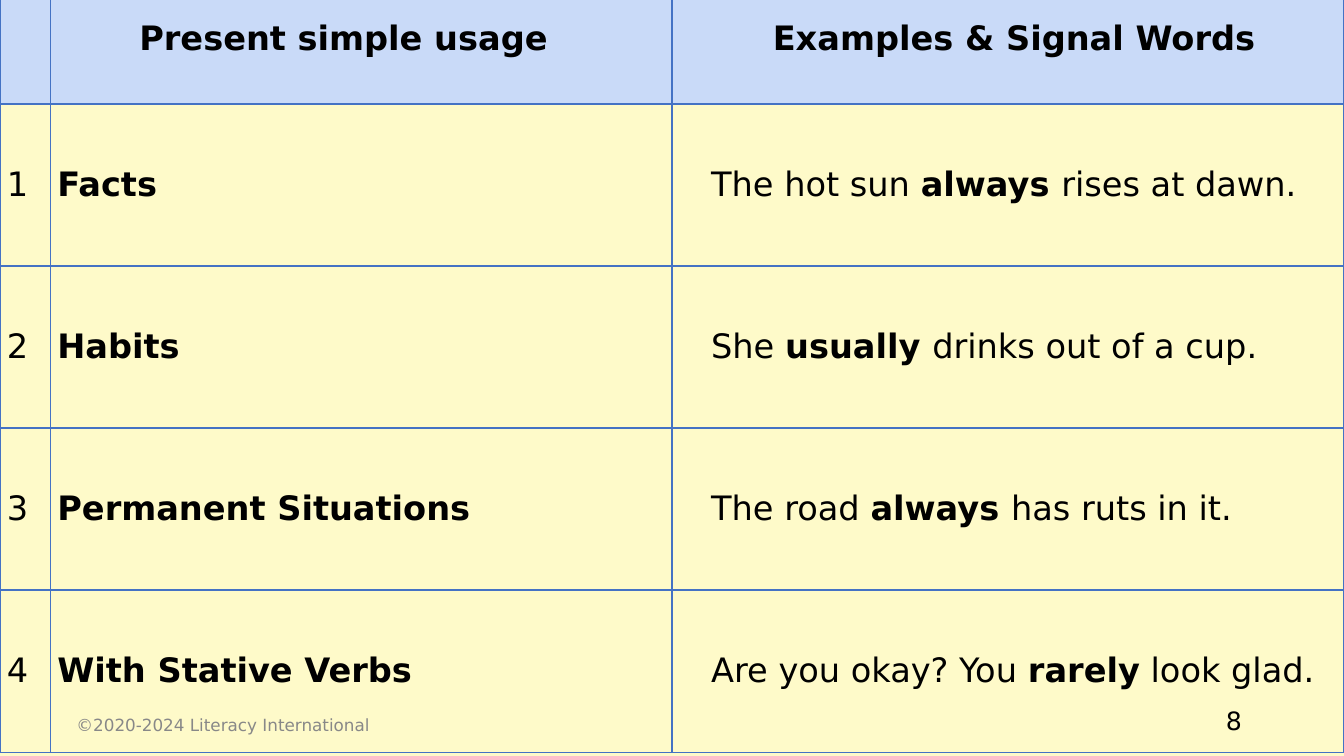
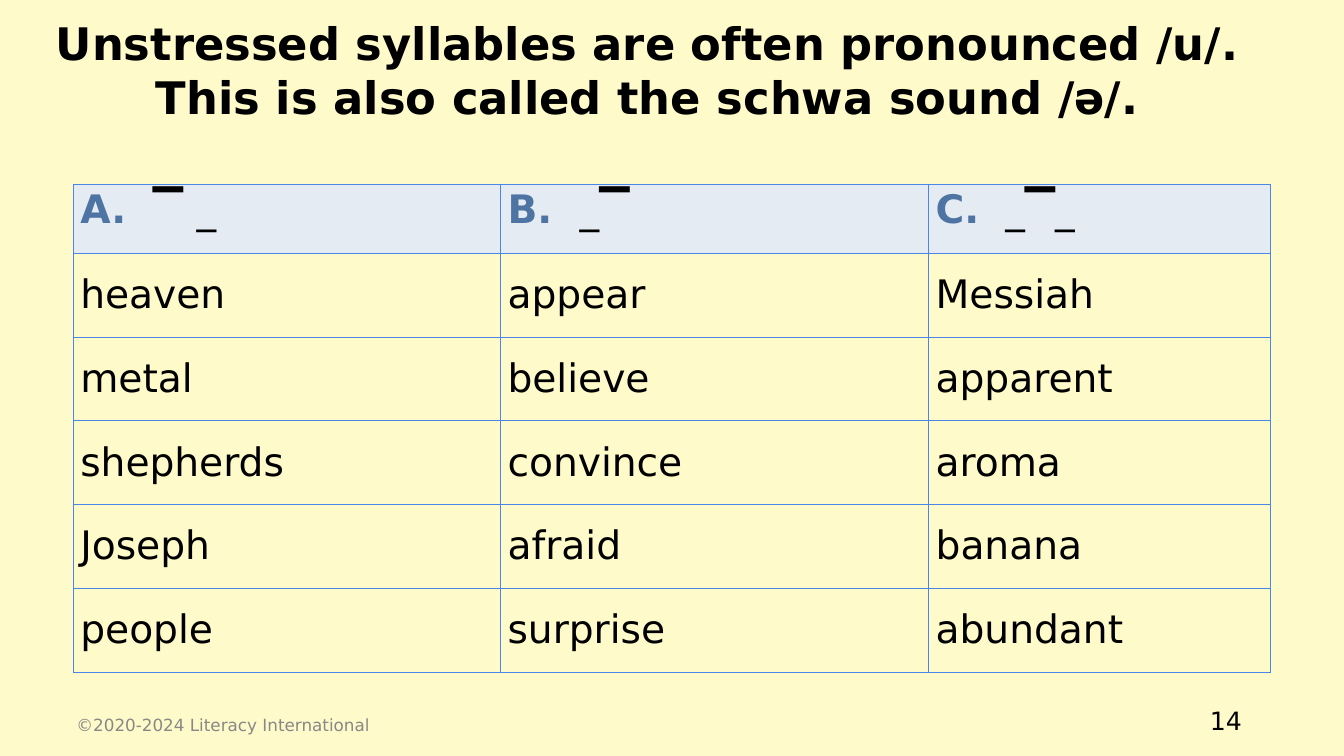
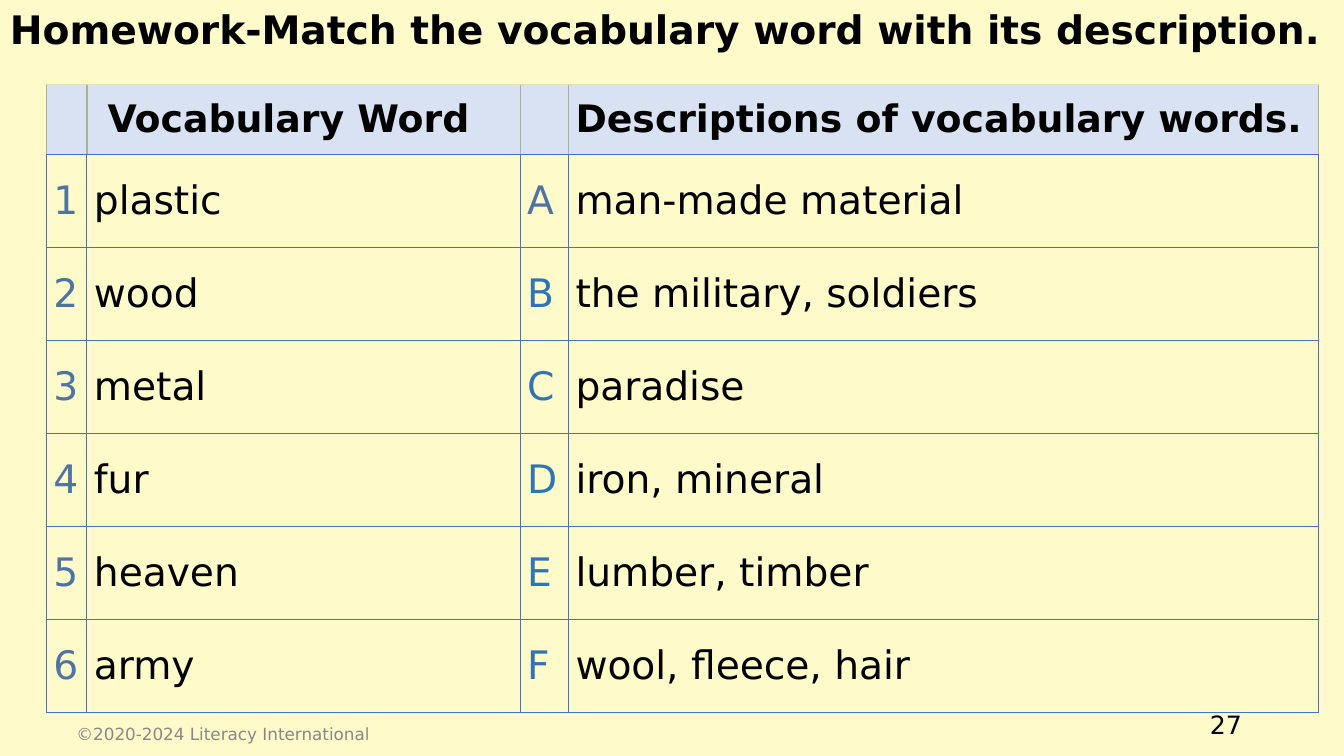
from lxml.etree import SubElement
from pptx import Presentation
from pptx.dml.color import RGBColor
from pptx.enum.text import MSO_ANCHOR, PP_ALIGN
from pptx.oxml.ns import qn
from pptx.util import Pt

FONT = "DejaVu Sans"
HUES = {
    "page": "FEFAC9", "ink": "000000", "gray": "888888",
    "slate": "4E74A3", "blue": "2E75B6", "line": "4472C4",
    "sky": "4A86E8", "sage": "A5B592",
    "usage": "C9DAF8", "sound": "E4EBF2", "match": "D8E2F3",
}
WIDE, TALL = 960, 540
USES = [
    ("", "*Present simple usage", "*Examples & Signal Words"),
    ("1", "*Facts", "The hot sun *always *rises at dawn."),
    ("2", "*Habits", "She *usually *drinks out of a cup."),
    ("3", "*Permanent Situations", "The road *always *has ruts in it."),
    ("4", "*With Stative Verbs", "Are you okay? You *rarely* look glad."),
]
SOUNDS = [
    ("*\t▔ *_", "\t_*▔", "\t_*▔*_"),
    ("heaven", "appear", "Messiah"),
    ("metal", "believe", "apparent"),
    ("shepherds", "convince", "aroma"),
    ("Joseph", "afraid", "banana"),
    ("people", "surprise", "abundant"),
]
PAIRS = [
    ("", "*Vocabulary Word", "", "*Descriptions of vocabulary words."),
    ("1", "plastic", "A", "man-made material"),
    ("2", "wood", "B", "the military, soldiers"),
    ("3", "metal", "C", "paradise"),
    ("4", "fur", "D", "iron, mineral"),
    ("5", "heaven", "E", "lumber, timber"),
    ("6", "army", "F", "wool, fleece, hair"),
]


def tint(name):
    """Return the named colour."""
    return RGBColor.from_string(HUES[name])


def put(frame, text, size=28, hue="ink", align=PP_ALIGN.LEFT, lead="", tab=0, gap=1):
    """Write one paragraph, where each asterisk turns bold on or off."""
    para = frame.paragraphs[0]
    para.alignment, para.line_spacing = align, gap
    if tab:
        stops = SubElement(para._p.get_or_add_pPr(), qn("a:tabLst"))
        SubElement(stops, qn("a:tab"), pos=str(Pt(tab)), algn="l")
    parts = [(part, i % 2 == 1, hue) for i, part in enumerate(text.split("*"))]
    for part, bold, color in [(lead, True, "slate")] + parts:
        if part:
            run = para.add_run()
            run.text = part
            run.font.name, run.font.size, run.font.bold = FONT, Pt(size), bold
            run.font.color.rgb = tint(color)


def label(slide, box, text, fill=None, anchor=MSO_ANCHOR.TOP, **form):
    """Add a wrapped text box."""
    shape = slide.shapes.add_textbox(*map(Pt, box))
    if fill:
        shape.fill.solid()
        shape.fill.fore_color.rgb = tint(fill)
    frame = shape.text_frame
    frame.word_wrap, frame.vertical_anchor = True, anchor
    put(frame, text, **form)


def edge(cell, lines):
    """Draw the left, right, top and bottom lines of a cell."""
    props = cell._tc.get_or_add_tcPr()
    for i, (side, (hue, width)) in enumerate(zip("LRTB", lines)):
        line = SubElement(props, qn("a:ln" + side), w=str(Pt(width)))
        fill = SubElement(line, qn("a:solidFill"))
        SubElement(fill, qn("a:srgbClr"), val=HUES[hue])
        props.insert(i, line)


def grid(slide, box, cols, head, rows, look):
    """Fill a box with a table; the last column and body rows share what is left."""
    x, y, wide, tall = box
    table = slide.shapes.add_table(len(rows), len(rows[0]), *map(Pt, box)).table
    table.first_row = table.horz_banding = False
    for col, width in zip(table.columns, [*cols, wide - sum(cols)]):
        col.width = Pt(width)
    for r, row in enumerate(rows):
        table.rows[r].height = Pt(head if r == 0 else (tall - head) / (len(rows) - 1))
        for c, text in enumerate(row):
            form = look(r, c)
            fill, lines = form.pop("fill", None), form.pop("lines")
            cell = table.cell(r, c)
            cell.margin_left, cell.margin_right = Pt(form.pop("inset", 5)), Pt(5)
            cell.margin_top = cell.margin_bottom = 0
            cell.vertical_anchor = form.pop("anchor", MSO_ANCHOR.MIDDLE)
            if fill:
                cell.fill.solid()
                cell.fill.fore_color.rgb = tint(fill)
            else:
                cell.fill.background()
            edge(cell, lines)
            put(cell.text_frame, text, **form)


def foot(slide, num, top=500.4, base=503.3):
    """Add the page number and the copyright line."""
    mid = MSO_ANCHOR.MIDDLE
    label(slide, (678.2, top, 216, 28.8), num, anchor=mid, size=18, align=PP_ALIGN.RIGHT)
    label(slide, (47.5, base, 324, 28.8), "©2020-2024 Literacy International",
          anchor=mid, size=12, hue="gray")


def usage(slide, box):
    """Build the table of present simple uses."""
    def look(r, c):
        """Format one cell."""
        form = {"size": 24, "lines": [("line", 1)] * 4}
        if r == 0:
            return form | {"fill": "usage", "inset": (5, 63.5, 72)[c]}
        return form | {"inset": 28 if c == 2 else 5}

    grid(slide, box, (36, 444), 93, USES, look)
    foot(slide, "8")


def sound(slide, box):
    """Build the table of stress patterns with its title."""
    def look(r, c):
        """Format one cell."""
        if r:
            return {"lines": [("sky", 0.75)] * 4}
        return {"lines": [("sky", 1)] * 3 + [("sky", 0.75)], "fill": "sound",
                "anchor": MSO_ANCHOR.TOP, "lead": "ABC"[c] + ".",
                "tab": (51.8, 51.5, 49.8)[c], "gap": 1.07}

    grid(slide, box, (305.2, 305.8), 49.5, SOUNDS, look)
    label(slide, (-8.6, 7.9, 942.5, 60.5),
          "*Unstressed syllables are often pronounced /u/. "
          "This is also called the schwa sound /ə/.", size=32, align=PP_ALIGN.CENTER)
    foot(slide, "14")


def match(slide, box):
    """Build the matching homework with its title."""
    def look(r, c):
        """Format one cell."""
        rule = ("line", 0.75)
        if r == 0:
            return {"lines": [("sage", 1)] * 3 + [rule], "fill": "match",
                    "size": 27, "inset": 14.7 if c == 1 else 5}
        keys = "slate" if c == 0 or r == 1 else "blue"
        return {"lines": [rule] * 4, "hue": "ink" if c % 2 else keys}

    grid(slide, box, (29, 309.5, 34.5), 50, PAIRS, look)
    label(slide, (0, 0, WIDE, 60.5),
          "*Homework-Match the vocabulary word with its description.", fill="page")
    foot(slide, "27", 503.3, 509.8)


def main():
    """Build and save the slides."""
    deck = Presentation()
    deck.slide_width, deck.slide_height = Pt(WIDE), Pt(TALL)
    for build, box in (
        (usage, (0, -18.7, WIDE, 556)),
        (sound, (52.4, 131.6, 855.2, 348.5)),
        (match, (33.1, 60.6, 908.5, 448.6)),
    ):
        slide = deck.slides.add_slide(deck.slide_layouts[6])
        slide.background.fill.solid()
        slide.background.fill.fore_color.rgb = tint("page")
        build(slide, box)
    deck.save("out.pptx")


if __name__ == "__main__":
    main()
